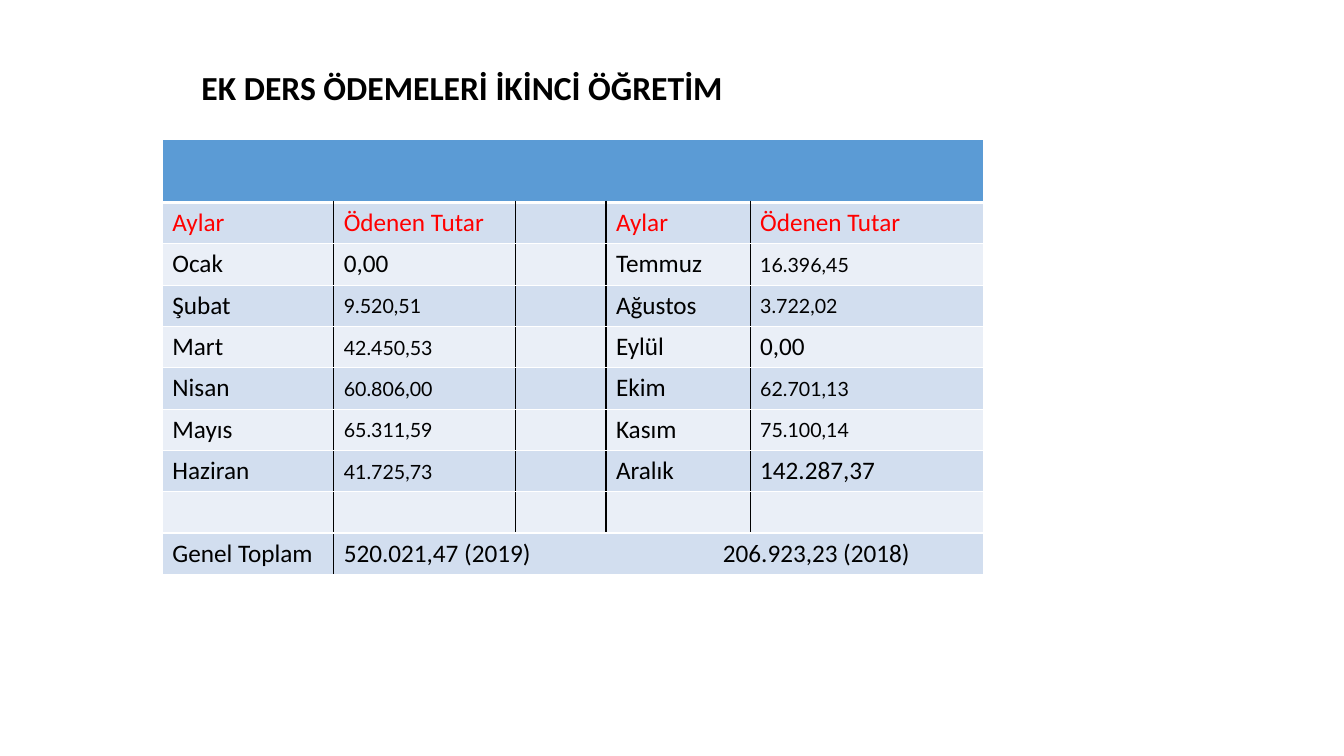
from dataclasses import dataclass

from lxml.etree import SubElement
from pptx import Presentation
from pptx.dml.color import RGBColor as Color
from pptx.enum.text import MSO_ANCHOR as Anchor
from pptx.oxml.ns import qn
from pptx.util import Inches, Pt


@dataclass(frozen=True)
class Theme:
    body_font: str = "Calibri"
    amount_font: str = "Lato"
    title_size: int = 24
    body_size: int = 18
    amount_size: int = 14
    ink: str = "000000"
    heading: str = "FF0000"
    rule: str = "FFFFFF"
    banner: str = "5B9BD5"
    bands: tuple = ("EAEFF7", "D2DEEF")


def assign(target, values):
    for name, value in values.items():
        setattr(target, name, value)


class SlideBuilder:
    def __init__(self, slide, theme):
        self.slide = slide
        self.theme = theme

    def add_text(self, frame, text, size, font=None, color=None, bold=False):
        para = frame.paragraphs[0]
        span = para.add_run()
        span.text = text
        assign(span.font, {"name": font or self.theme.body_font,
                           "size": Pt(size), "bold": bold})
        span.font.color.rgb = Color.from_string(color or self.theme.ink)
        return para

    def title(self, text, *place):
        box = self.slide.shapes.add_textbox(*map(Inches, place))
        assign(box.text_frame, {"word_wrap": True, "vertical_anchor": Anchor.MIDDLE})
        para = self.add_text(box.text_frame, text, self.theme.title_size, bold=True)
        para.line_spacing = 0.9

    def table(self, left, top, widths, heights):
        shape = self.slide.shapes.add_table(
            len(heights), len(widths), Inches(left), Inches(top),
            Inches(sum(widths)), Inches(sum(heights)))
        table = shape.table
        assign(table, {"first_row": False, "horz_banding": False})
        for column, width in zip(table.columns, widths):
            column.width = Inches(width)
        for row, height in zip(table.rows, heights):
            row.height = Inches(height)
        return table

    def border(self, cell, side, color, width):
        line = SubElement(cell._tc.get_or_add_tcPr(), qn(f"a:ln{side}"), w=str(Pt(width)))
        fill = SubElement(line, qn("a:solidFill"))
        SubElement(fill, qn("a:srgbClr"), val=color)

    def paint(self, table):
        """Fill the bands and rule the cells: white outside and across, black between columns."""
        theme, last = self.theme, len(table.columns)
        for row_index, row in enumerate(table.rows):
            for column_index, cell in enumerate(row.cells):
                if cell.is_spanned:
                    continue
                at_right = column_index + cell.span_width == last
                self.border(cell, "L", theme.ink if column_index else theme.rule, 1)
                self.border(cell, "R", theme.rule if at_right else theme.ink, 1)
                self.border(cell, "T", theme.rule, 3 if row_index == 1 else 1)
                self.border(cell, "B", theme.rule, 1 if row_index else 3)
                cell.fill.solid()
                color = theme.bands[row_index % 2] if row_index else theme.banner
                cell.fill.fore_color.rgb = Color.from_string(color)

    def label(self, cell, text, color=None):
        return self.add_text(cell.text_frame, text, self.theme.body_size, color=color)

    def amount(self, cell, text):
        assign(cell, {"vertical_anchor": Anchor.MIDDLE, "margin_left": Inches(0.1),
                      "margin_right": Inches(0.01), "margin_top": Inches(0.01),
                      "margin_bottom": 0})
        self.add_text(cell.text_frame, text, self.theme.amount_size, self.theme.amount_font)

    def tab_stop(self, para, position):
        stops = SubElement(para._p.get_or_add_pPr(), qn("a:tabLst"))
        SubElement(stops, qn("a:tab"), pos=str(Inches(position)), algn="l")


HALF_YEARS = {
    0: [("Ocak", "0,00"), ("Şubat", "9.520,51"), ("Mart", "42.450,53"),
        ("Nisan", "60.806,00"), ("Mayıs", "65.311,59"), ("Haziran", "41.725,73")],
    3: [("Temmuz", "16.396,45"), ("Ağustos", "3.722,02"), ("Eylül", "0,00"),
        ("Ekim", "62.701,13"), ("Kasım", "75.100,14"), ("Aralık", "142.287,37")],
}
BODY_STYLE_AMOUNTS = {"0,00", "142.287,37"}


def main():
    deck = Presentation()
    assign(deck, {"slide_width": Inches(13.33), "slide_height": Inches(7.5)})
    theme = Theme()
    page = SlideBuilder(deck.slides.add_slide(deck.slide_layouts[6]), theme)
    page.title("EK DERS ÖDEMELERİ İKİNCİ ÖĞRETİM", 1.9, 0.4, 10.52, 0.98)

    payments = page.table(1.61, 1.38, [1.7, 1.8, 0.9, 1.43, 2.32], [0.63] + [0.41] * 9)
    payments.cell(0, 0).merge(payments.cell(0, 4))
    payments.cell(9, 1).merge(payments.cell(9, 4))
    page.paint(payments)

    for column, months in HALF_YEARS.items():
        page.label(payments.cell(1, column), "Aylar", theme.heading)
        page.label(payments.cell(1, column + 1), "Ödenen Tutar", theme.heading)
        for row, (month, paid) in enumerate(months, start=2):
            page.label(payments.cell(row, column), month)
            add_paid = page.label if paid in BODY_STYLE_AMOUNTS else page.amount
            add_paid(payments.cell(row, column + 1), paid)

    page.label(payments.cell(9, 0), "Genel Toplam")
    totals = page.label(payments.cell(9, 1), "520.021,47 (2019)\t206.923,23 (2018)")
    page.tab_stop(totals, 3.76)
    deck.save("out.pptx")


if __name__ == "__main__":
    main()
